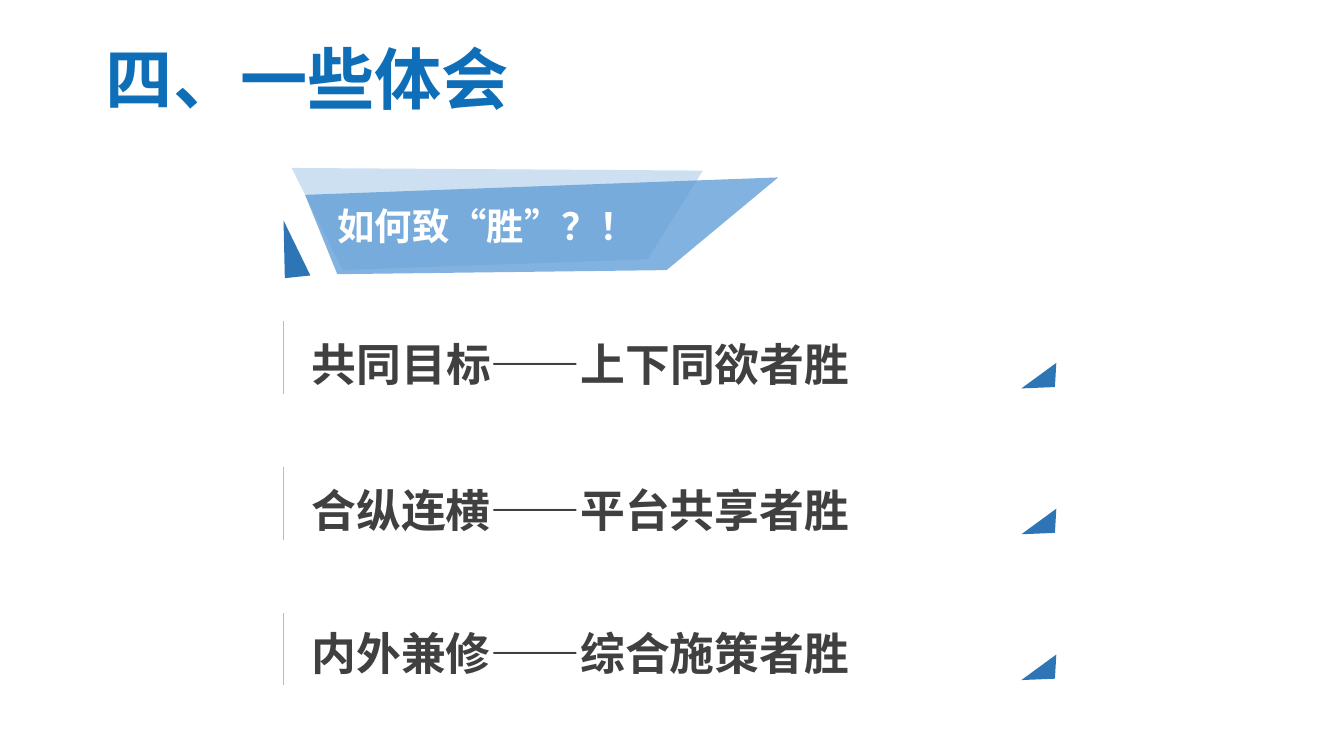
from lxml.etree import SubElement
from pptx import Presentation
from pptx.dml.color import RGBColor
from pptx.enum.shapes import MSO_CONNECTOR
from pptx.enum.text import MSO_ANCHOR as Anchor, PP_ALIGN as Align
from pptx.oxml.ns import qn
from pptx.util import Inches, Pt

TITLE_BLUE = RGBColor(0x0E, 0x6E, 0xB8)
DARK_BLUE = RGBColor(0x2E, 0x75, 0xB6)
MID_BLUE = RGBColor(0x5B, 0x9B, 0xD5)
PALE_BLUE = RGBColor(0xBD, 0xD7, 0xEE)
RULE_BLUE = RGBColor(0x9D, 0xC3, 0xE6)
INK = RGBColor(0x40, 0x40, 0x40)
WHITE = RGBColor(0xFF, 0xFF, 0xFF)
FONT = "Noto Sans CJK SC"

ROW_TOP, ROW_PITCH = 2.39, 2.17 / 2
ROWS = [
    ("共同目标——上下同欲者胜", 5.09, 0.05),
    ("合纵连横——平台共享者胜", 5.74, 0.05),
    ("内外兼修——综合施策者胜", 5.74, 0.07),
]


def write_text(frame, text, *, size, color, spacing=1.0, anchor=Anchor.TOP, inset=0.1):
    """Fill a text frame with one bold, left-aligned paragraph."""
    frame.word_wrap = True
    frame.vertical_anchor = anchor
    frame.margin_left = Inches(inset)
    paragraph = frame.paragraphs[0]
    paragraph.alignment = Align.LEFT
    paragraph.line_spacing = spacing
    run = paragraph.add_run()
    run.text = text
    run.font.size = Pt(size)
    run.font.bold = True
    run.font.color.rgb = color
    run.font.name = FONT
    SubElement(run.font._element, qn("a:ea")).set("typeface", FONT)


def add_label(slide, box, text, **style):
    """Add a text box at box, given as left, top, width, height in inches."""
    label = slide.shapes.add_textbox(*map(Inches, box))
    write_text(label.text_frame, text, **style)


def add_facet(slide, left, top, points, color, opacity=100):
    """Add a borderless polygon whose points are relative to left, top."""
    corners = [(Inches(left + x), Inches(top + y)) for x, y in points]
    builder = slide.shapes.build_freeform(*corners[0])
    builder.add_line_segments(corners[1:], close=True)
    facet = builder.convert_to_shape()
    facet.shadow.inherit = False
    facet.line.fill.background()
    facet.fill.solid()
    facet.fill.fore_color.rgb = color
    if opacity < 100:
        tint = facet._element.spPr.find(qn("a:solidFill"))[0]
        SubElement(tint, qn("a:alpha")).set("val", str(opacity * 1000))
    return facet


def add_banner(slide, left, top, question):
    """Draw the faceted banner with its question."""
    add_facet(slide, left, top, [(0, 0.39), (0.01, 0.82), (0.2, 0.8)], DARK_BLUE)
    add_facet(slide, left, top,
              [(0.06, 0), (3.12, 0.02), (2.71, 0.68), (0.44, 0.76)], PALE_BLUE, 76)
    front = add_facet(slide, left, top,
                      [(0.16, 0.2), (3.68, 0.07), (2.85, 0.76), (0.4, 0.79)], MID_BLUE, 76)
    write_text(front.text_frame, question, size=20, color=WHITE,
               anchor=Anchor.MIDDLE, inset=0.24)


def add_row(slide, left, top, text, width, lift):
    """Draw one lesson with its rule on the left and its corner on the right."""
    add_label(slide, (left + 0.11, top - lift, width, 0.65), text, size=24,
              color=INK, spacing=1.2, anchor=Anchor.MIDDLE)
    add_facet(slide, left, top, [(5.74, 0.49), (5.49, 0.5), (5.75, 0.31)], DARK_BLUE)
    rule = slide.shapes.add_connector(
        MSO_CONNECTOR.STRAIGHT, Inches(left), Inches(top), Inches(left), Inches(top + 0.54))
    rule.line.color.rgb = RULE_BLUE
    rule.line.width = Pt(0.5)
    SubElement(rule._element.spPr, qn("a:effectLst"))


def main():
    """Build the slide and save it."""
    deck = Presentation()
    deck.slide_width, deck.slide_height = Inches(10), Inches(10 * 9 / 16)
    slide = deck.slides.add_slide(deck.slide_layouts[6])
    add_banner(slide, 2.11, 1.25, "如何致“胜”？！")
    add_label(slide, (0.69, 0.3, 8.62, 1.09), "四、一些体会", size=36,
              color=TITLE_BLUE, spacing=0.9)
    for index, (lesson, width, lift) in enumerate(ROWS):
        add_row(slide, 2.11, ROW_TOP + index * ROW_PITCH, lesson, width, lift)
    deck.save("out.pptx")


if __name__ == "__main__":
    main()
